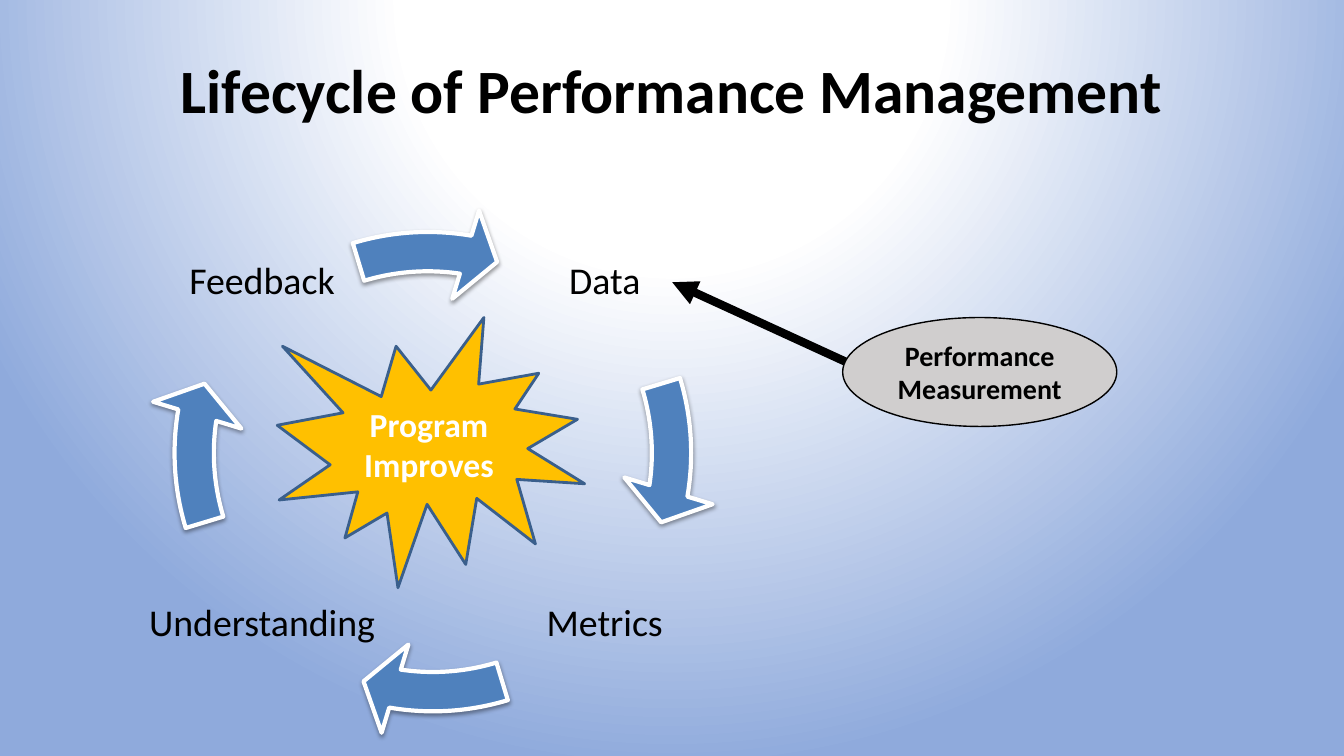
from dataclasses import dataclass

from pptx import Presentation
from pptx.dml.color import RGBColor as Rgb
from pptx.enum.shapes import MSO_CONNECTOR as Link, MSO_SHAPE as Kind
from pptx.enum.text import MSO_ANCHOR as Anchor, MSO_AUTO_SIZE as Fit, PP_ALIGN as Align
from pptx.oxml import parse_xml
from pptx.oxml.ns import nsdecls
from pptx.oxml.xmlchemy import OxmlElement as Node
from pptx.util import Pt


@dataclass(frozen=True)
class Theme:
    font: str = "Calibri"
    black: str = "000000"
    white: str = "FFFFFF"
    sky: str = "8FAADC"
    blue: str = "4F81BD"
    navy: str = "3A5F8C"
    gold: str = "FFC000"
    gray: str = "D0CECE"
    title: int = 44
    label: int = 27
    burst: int = 24
    note: int = 20


T = Theme()


def write(frame, lines, size, color, bold=False, space=None, inset=None):
    """Fill a text frame with centred lines, one paragraph each."""
    frame.word_wrap = True
    frame.auto_size = Fit.NONE
    frame.vertical_anchor = Anchor.MIDDLE
    if inset is not None:
        frame.margin_left = frame.margin_right = Pt(inset)
        frame.margin_top = frame.margin_bottom = Pt(inset)
    for i, line in enumerate(lines):
        par = frame.add_paragraph() if i else frame.paragraphs[0]
        par.alignment = Align.CENTER
        if space:
            par.line_spacing = space
        run = par.add_run()
        run.text = line
        font = run.font
        font.name, font.size, font.bold = T.font, Pt(size), bold
        font.color.rgb = Rgb.from_string(color)


def add_form(slide, kind, box, fill, line, width):
    form = slide.shapes.add_shape(kind, *map(Pt, box))
    form.shadow.inherit = False
    form.fill.solid()
    form.fill.fore_color.rgb = Rgb.from_string(fill)
    form.line.color.rgb = Rgb.from_string(line)
    form.line.width = Pt(width)
    return form


def add_shade(form):
    """Give a shape a soft shadow straight below it."""
    old = form._element.spPr.find("{*}effectLst")
    old.append(parse_xml(
        f'<a:outerShdw {nsdecls("a")} blurRad="{Pt(3.1)}" dist="{Pt(1.6)}"'
        f' dir="5400000" rotWithShape="0"><a:srgbClr val="{T.black}">'
        '<a:alpha val="38000"/></a:srgbClr></a:outerShdw>'))


def paint_back(slide):
    """Radial glow centred above the slide."""
    stops = ((0, T.white), (35, T.white), (100, T.sky))
    marks = "".join(f'<a:gs pos="{pos * 1000}"><a:srgbClr val="{color}"/></a:gs>'
                    for pos, color in stops)
    slide._element.cSld.insert(0, parse_xml(
        f'<p:bg {nsdecls("p", "a")}><p:bgPr><a:gradFill rotWithShape="1">'
        f'<a:gsLst>{marks}</a:gsLst><a:path path="circle"><a:fillToRect'
        ' l="50000" t="-80000" r="50000" b="180000"/></a:path></a:gradFill>'
        '<a:effectLst/></p:bgPr></p:bg>'))


def add_title(slide, box):
    head = slide.shapes.title
    head.left, head.top, head.width, head.height = map(Pt, box)
    write(head.text_frame, ["Lifecycle of Performance Management"],
          T.title, T.black, True, 0.9)


def add_cycle(slide, box):
    """Four labels, each with an arrow a quarter turn further on."""
    left, top, side = box
    steps = (
        ("Data", (253.5, 39.6, 152.6, 83.5), (3.6, 0)),
        ("Metrics", (257.8, 253.5, 144, 144), (3.6, 0)),
        ("Understanding", (0, 253.5, 170, 144), (3.6, 0)),
        ("Feedback", (13, 9.4, 144, 144), (0, 26.6)),
    )
    turn = 54  # a quarter circle in adjustment units
    for i, (name, (x, y, w, h), (dx, dy)) in enumerate(steps):
        label = slide.shapes.add_textbox(*map(Pt, (left + x, top + y, w, h)))
        write(label.text_frame, [name], T.label, T.black, False, 0.9, 2.9)
        arrow = add_form(slide, Kind.CIRCULAR_ARROW,
                         (left + dx, top + dy, side, side), T.blue, T.white, 3)
        values = (0.069, 4.658, 5.474 + turn * i,
                  (205.868 + turn * i) % (4 * turn), 0.081)
        for k, value in enumerate(values):
            arrow.adjustments[k] = value
        add_shade(arrow)

    # Burst in the middle of the ring
    burst = add_form(slide, Kind.EXPLOSION1,
                     (left + 95.8, top + 106.6, 219.6, 193), T.gold, T.navy, 2)
    write(burst.text_frame, ["Program", "Improves"], T.burst, T.white, True)


def add_note(slide, box):
    """Ellipse at the right of the box, with an arrow to its top left corner."""
    left, top, width, height = box
    ends = (left + 157, top + 72, left, top)
    link = slide.shapes.add_connector(Link.STRAIGHT, *map(Pt, ends))
    link.line.color.rgb = Rgb.from_string(T.black)
    link.line.width = Pt(6)
    tip = Node("a:tailEnd")
    tip.set("type", "triangle")
    link.line._get_or_add_ln().append(tip)
    link._element.spPr.append(Node("a:effectLst"))

    w, h = 195.8, 77.8
    oval = add_form(slide, Kind.OVAL, (left + width - w, top + height - h, w, h),
                    T.gray, T.black, 1)
    write(oval.text_frame, ["Performance Measurement"], T.note, T.black, True)


def main():
    deck = Presentation()
    deck.slide_width, deck.slide_height = Pt(960), Pt(540)
    slide = deck.slides.add_slide(deck.slide_layouts[5])
    paint_back(slide)
    add_title(slide, (0, 0, 960, 133.2))
    add_cycle(slide, (102.2, 120.2, 406.8))
    add_note(slide, (480.2, 201.6, 317.5, 103))
    deck.save("out.pptx")


if __name__ == "__main__":
    main()
